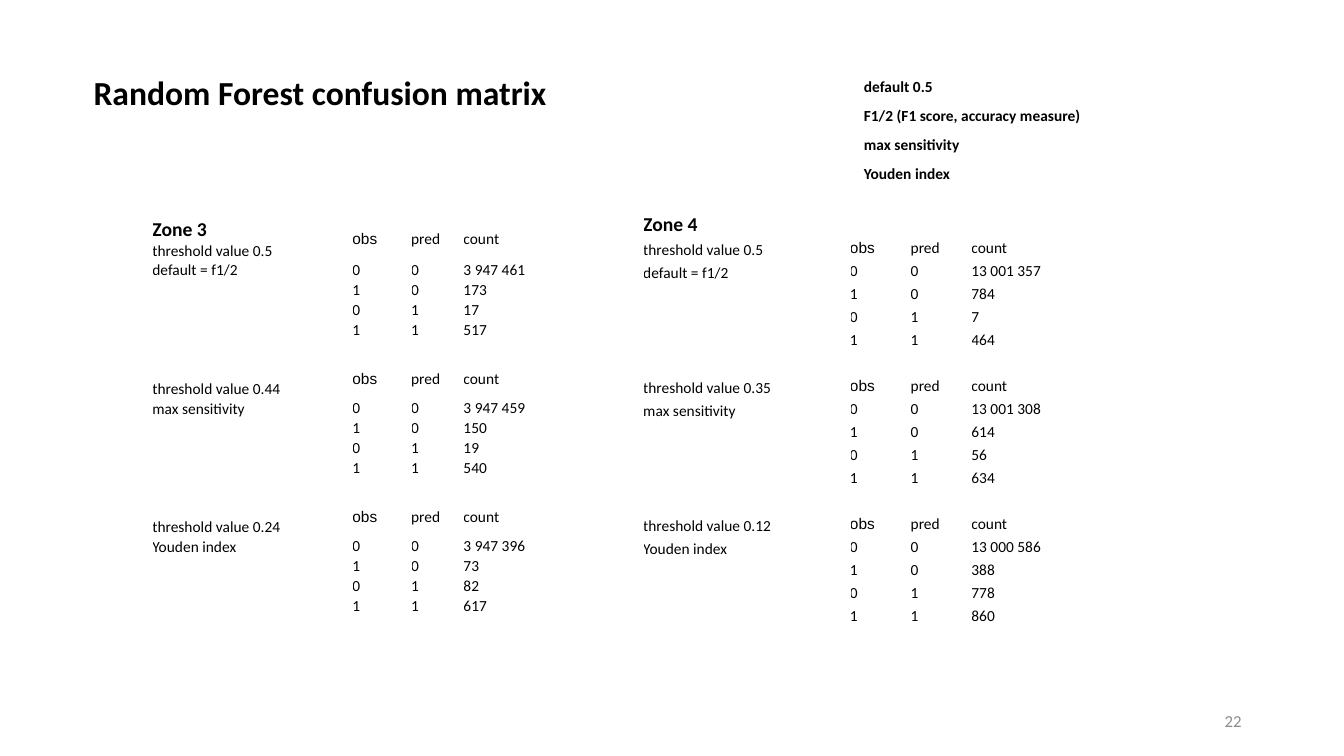
"""Build the slide of Random Forest confusion matrices for two zones."""
from pptx import Presentation
from pptx.dml.color import RGBColor
from pptx.enum.text import MSO_ANCHOR, PP_ALIGN
from pptx.oxml.ns import qn
from pptx.util import Cm, Pt
from lxml import etree

TOP, MID, LOW = MSO_ANCHOR.TOP, MSO_ANCHOR.MIDDLE, MSO_ANCHOR.BOTTOM
LEFT, RIGHT = PP_ALIGN.LEFT, PP_ALIGN.RIGHT
BLACK = RGBColor(0x00, 0x00, 0x00)
GREY = RGBColor(0x8C, 0x8C, 0x8C)
WHITE = RGBColor(0xFF, 0xFF, 0xFF)

KEYS = ["default 0.5", "F1/2 (F1 score, accuracy measure)",
        "max sensitivity", "Youden index"]
PAIRS = [("0", "0"), ("1", "0"), ("0", "1"), ("1", "1")]
ZONE3 = [
    ("0.5", "default = f1/2", ["3 947 461", "173", "17", "517"]),
    ("0.44", "max sensitivity", ["3 947 459", "150", "19", "540"]),
    ("0.24", "Youden index", ["3 947 396", "73", "82", "617"]),
]
ZONE4 = [
    ("0.5", "default = f1/2", ["13 001 357", "784", "7", "464"]),
    ("0.35", "max sensitivity", ["13 001 308", "614", "56", "634"]),
    ("0.12", "Youden index", ["13 000 586", "388", "778", "860"]),
]


class Deck:
    font = "Calibri"
    size = 11

    def __init__(self):
        self.prs = Presentation()
        self.prs.slide_width, self.prs.slide_height = Cm(33.87), Cm(19.05)
        self.slide = self.prs.slides.add_slide(self.prs.slide_layouts[6])

    def run(self, para, text, size=None, bold=False, color=BLACK, font=None):
        run = para.add_run()
        run.text = text
        run.font.name = font or self.font
        run.font.size = Pt(size or self.size)
        run.font.bold = bold
        run.font.color.rgb = color

    def text(self, box, text, anchor=TOP, align=LEFT, **style):
        frame = self.slide.shapes.add_textbox(*map(Cm, box)).text_frame
        frame.word_wrap = True
        frame.vertical_anchor = anchor
        frame.paragraphs[0].alignment = align
        self.run(frame.paragraphs[0], text, **style)

    def cell(self, cell, lines, anchor, pad, gap, fill):
        cell.margin_left = cell.margin_right = cell.margin_top = Cm(pad)
        cell.margin_bottom = 0
        cell.vertical_anchor = anchor
        if fill:
            cell.fill.solid()
            cell.fill.fore_color.rgb = fill
        else:
            cell.fill.background()
        frame = cell.text_frame
        for i, (text, style) in enumerate(lines):
            para = frame.add_paragraph() if i else frame.paragraphs[0]
            para.line_spacing = gap
            self.run(para, text, **style)
        if not lines:
            etree.SubElement(frame.paragraphs[0]._p, qn("a:endParaRPr"),
                             sz=str(self.size * 100))

    def table(self, left, top, cols, rows, grid, pad=0, gap=1.0, fill=None):
        table = self.slide.shapes.add_table(
            len(rows), len(cols), Cm(left), Cm(top),
            Cm(sum(cols)), Cm(sum(rows))).table
        table.first_row = table.horz_banding = False
        for col, width in zip(table.columns, cols):
            col.width = Cm(width)
        for row, height, line in zip(table.rows, rows, grid):
            row.height = Cm(height)
            for i, cell in enumerate(row.cells):
                self.cell(cell, line[i], MID if i else LOW, pad, gap, fill)


def plain(text):
    return [(text, {})] if text else []


def matrix(zone):
    """Return the cell grid of a zone, with an empty row between blocks."""
    grid = []
    for limit, rule, counts in zone:
        if grid:
            grid.append([[]] * 5)
        grid.append([plain(f"threshold value {limit}"), [],
                     [("obs", {"font": "Arial"})],
                     plain("pred"), plain("count")])
        for i, ((obs, pred), count) in enumerate(zip(PAIRS, counts)):
            grid.append([plain("" if i else rule), [],
                         plain(obs), plain(pred), plain(count)])
    return grid


def main():
    deck = Deck()
    bold = {"bold": True}
    head = {"size": 14, "bold": True}

    deck.text((2.11, 1.7, 20.24, 1.27), "Random Forest confusion matrix",
              size=24, bold=True)
    deck.table(21.74, 1.7, [6], [0.5] * len(KEYS),
               [[[(key, bold)]] for key in KEYS],
               pad=0.03, gap=1.5, fill=WHITE)

    grid = matrix(ZONE3)
    grid[0][0].insert(0, ("Zone 3", head))
    rows = [0.98 if i % 6 == 0 else 0.5 for i in range(len(grid))]
    rows[0] = 1.07
    deck.table(3.84, 5.49, [3.56, 1.48, 1.48, 1.32, 2.24], rows, grid)

    grid = [[[]] * 5, [[("Zone 4", head)]] + [[]] * 4] + matrix(ZONE4)
    rows = [0.58] * len(grid)
    rows[1] = 0.65
    deck.table(16.21, 4.73, [3.68, 1.53, 1.53, 1.53, 2.15], rows, grid)

    deck.text((23.92, 17.66, 7.62, 1.01), "22", MID, RIGHT,
              size=12, color=GREY)
    deck.prs.save("out.pptx")


if __name__ == "__main__":
    main()
